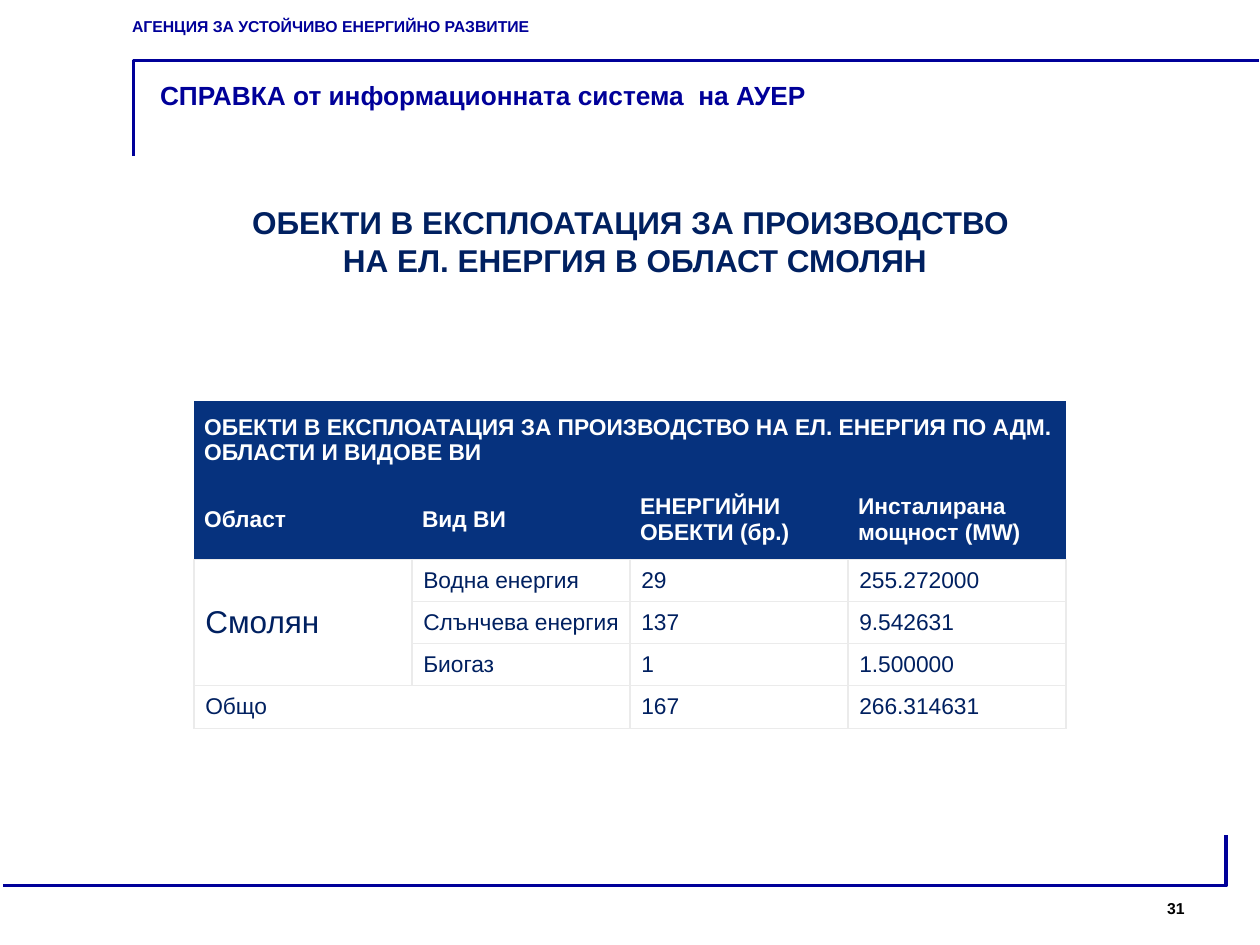
from dataclasses import dataclass

from lxml import etree
from pptx import Presentation
from pptx.dml.color import RGBColor
from pptx.enum.text import MSO_ANCHOR, MSO_AUTO_SIZE, PP_ALIGN
from pptx.oxml.ns import qn
from pptx.util import Inches, Pt

LEFT, CENTER, RIGHT = PP_ALIGN.LEFT, PP_ALIGN.CENTER, PP_ALIGN.RIGHT
TOP, MIDDLE, BOTTOM = MSO_ANCHOR.TOP, MSO_ANCHOR.MIDDLE, MSO_ANCHOR.BOTTOM
NO_AUTOFIT = MSO_AUTO_SIZE.NONE

BLUE = RGBColor(0x00, 0x00, 0x99)
NAVY = RGBColor(0x00, 0x20, 0x60)
HEADER_FILL = RGBColor(0x06, 0x32, 0x7E)
BORDER = RGBColor(0xEB, 0xEB, 0xEB)
WHITE = RGBColor(0xFF, 0xFF, 0xFF)
BLACK = RGBColor(0x00, 0x00, 0x00)

FONT = "Arial"
SLIDE_WIDTH, SLIDE_HEIGHT = 10, 7.5
PLAIN_TABLE_STYLE = "{2D5ABB26-0587-4C30-8999-92F81FD0307C}"
COLUMN_COUNT, HEADER_ROWS, DATA_ROWS = 4, 2, 4
HEADER_HEIGHT = 0.63


@dataclass
class Area:
    """A rectangle in inches."""
    left: float
    top: float
    width: float
    height: float

    def lengths(self) -> list:
        return [Inches(n) for n in (self.left, self.top, self.width, self.height)]


@dataclass
class CellSpec:
    row: int
    column: int
    text: str
    row_span: int = 1
    column_span: int = 1
    size: float = 13


CELLS = [
    CellSpec(0, 0, "ОБЕКТИ В ЕКСПЛОАТАЦИЯ ЗА ПРОИЗВОДСТВО НА ЕЛ. ЕНЕРГИЯ "
                   "ПО АДМ. ОБЛАСТИ И ВИДОВЕ ВИ", column_span=4),
    CellSpec(1, 0, "Област"),
    CellSpec(1, 1, "Вид ВИ"),
    CellSpec(1, 2, "ЕНЕРГИЙНИ ОБЕКТИ (бр.)"),
    CellSpec(1, 3, "Инсталирана мощност (MW)"),
    CellSpec(2, 0, "Смолян", row_span=3, size=18),
    CellSpec(2, 1, "Водна енергия"),
    CellSpec(2, 2, "29"),
    CellSpec(2, 3, "255.272000"),
    CellSpec(3, 1, "Слънчева енергия"),
    CellSpec(3, 2, "137"),
    CellSpec(3, 3, "9.542631"),
    CellSpec(4, 1, "Биогаз"),
    CellSpec(4, 2, "1"),
    CellSpec(4, 3, "1.500000"),
    CellSpec(5, 0, "Общо", column_span=2),
    CellSpec(5, 2, "167"),
    CellSpec(5, 3, "266.314631"),
]


def write_text(frame, text: str, *, size: float, color: RGBColor,
               bold: bool = True, align=LEFT) -> None:
    """Write one paragraph for each line of the text."""
    for index, line in enumerate(text.split("\n")):
        para = frame.paragraphs[0] if index == 0 else frame.add_paragraph()
        para.alignment = align
        span = para.add_run()
        span.text = line
        span.font.name = FONT
        span.font.size = Pt(size)
        span.font.bold = bold
        span.font.color.rgb = color


def add_text(page, area: Area, text: str, *, anchor=TOP, **text_format) -> None:
    box = page.shapes.add_textbox(*area.lengths())
    box.text_frame.word_wrap = True
    box.text_frame.vertical_anchor = anchor
    write_text(box.text_frame, text, **text_format)


def add_corner(page, points: list[tuple[float, float]]) -> None:
    """Draw an open line through points given in inches."""
    start, *rest = [(Inches(x), Inches(y)) for x, y in points]
    builder = page.shapes.build_freeform(*start)
    builder.add_line_segments(rest, close=False)
    corner = builder.convert_to_shape()
    corner.shadow.inherit = False
    corner.fill.background()
    corner.line.color.rgb = BLUE
    corner.line.width = Pt(2)


def set_borders(cell, sides: str) -> None:
    """Draw the cell's borders; sides are letters out of L, R, T and B."""
    properties = cell._tc.get_or_add_tcPr()
    for index, side in enumerate(sides):
        line = etree.Element(qn(f"a:ln{side}"), w=str(Pt(0.75)))
        fill = etree.SubElement(line, qn("a:solidFill"))
        etree.SubElement(fill, qn("a:srgbClr"), val=str(BORDER))
        properties.insert(index, line)


def add_energy_table(page, area: Area) -> None:
    row_count = HEADER_ROWS + DATA_ROWS
    data_height = (area.height - HEADER_ROWS * HEADER_HEIGHT) / DATA_ROWS
    frame = page.shapes.add_table(row_count, COLUMN_COUNT, *area.lengths())
    table = frame.table
    table.first_row = table.horz_banding = False
    table._tbl.tblPr.find(qn("a:tableStyleId")).text = PLAIN_TABLE_STYLE
    for index, row in enumerate(table.rows):
        row.height = Inches(HEADER_HEIGHT if index < HEADER_ROWS else data_height)

    # Fills and borders, also under merged cells
    for row in range(row_count):
        for column in range(COLUMN_COUNT):
            cell = table.cell(row, column)
            if row < HEADER_ROWS:
                cell.fill.solid()
                cell.fill.fore_color.rgb = HEADER_FILL
                set_borders(cell, "B" if row == HEADER_ROWS - 1 else "")
            else:
                cell.fill.background()
                set_borders(cell, "LRTB")

    # Spans and text
    for spec in CELLS:
        cell = table.cell(spec.row, spec.column)
        if spec.row_span * spec.column_span > 1:
            cell.merge(table.cell(spec.row + spec.row_span - 1,
                                  spec.column + spec.column_span - 1))
        header = spec.row < HEADER_ROWS
        cell.vertical_anchor = MIDDLE
        cell.margin_left = Inches(0.08 if header else 0.09)
        cell.margin_right = cell.margin_top = cell.margin_bottom = Inches(
            0.08 if header else 0.05)
        write_text(cell.text_frame, spec.text, size=spec.size, bold=header,
                   color=WHITE if header else NAVY)


def main() -> None:
    deck = Presentation()
    deck.slide_width, deck.slide_height = Inches(SLIDE_WIDTH), Inches(SLIDE_HEIGHT)
    page = deck.slides.add_slide(deck.slide_layouts[5])

    # Frame corners and agency name
    add_corner(page, [(1.06, 1.24), (1.06, 0.48), (9.99, 0.48)])
    add_corner(page, [(9.73, 6.63), (9.73, 7.03), (0.02, 7.03)])
    add_text(page, Area(0.95, 0.08, 8.27, 0.25),
             "АГЕНЦИЯ ЗА УСТОЙЧИВО ЕНЕРГИЙНО РАЗВИТИЕ", size=9, color=BLUE)

    # Title
    title = page.shapes.title
    title.left, title.top, title.width, title.height = Area(
        1.17, 0.58, 8.18, 0.66).lengths()
    title.text_frame.auto_size = NO_AUTOFIT
    title.text_frame.vertical_anchor = TOP
    write_text(title.text_frame, "СПРАВКА от информационната система  на АУЕР",
               size=15, color=BLUE)

    # Heading, table and page number
    add_text(page, Area(1.66, 1.56, 6.69, 0.71),
             "ОБЕКТИ В ЕКСПЛОАТАЦИЯ ЗА ПРОИЗВОДСТВО\n"
             " НА ЕЛ. ЕНЕРГИЯ В ОБЛАСТ СМОЛЯН",
             size=18, color=NAVY, align=CENTER)
    add_energy_table(page, Area(1.54, 3.18, 6.92, 2.6))
    add_text(page, Area(7.17, 6.83, 2.33, 0.5), "31", size=9, color=BLACK,
             anchor=BOTTOM, align=RIGHT)

    deck.save("out.pptx")


if __name__ == "__main__":
    main()
